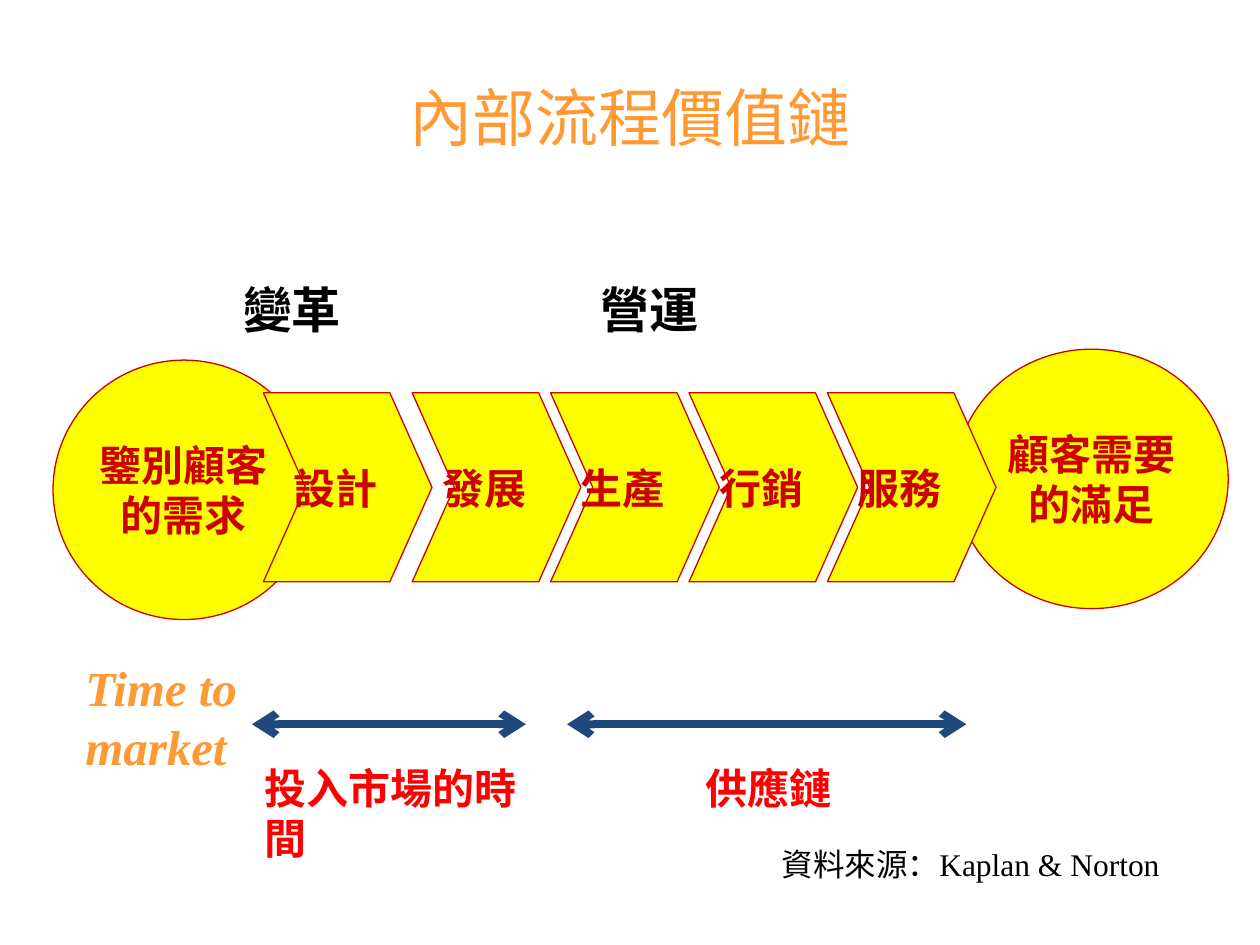
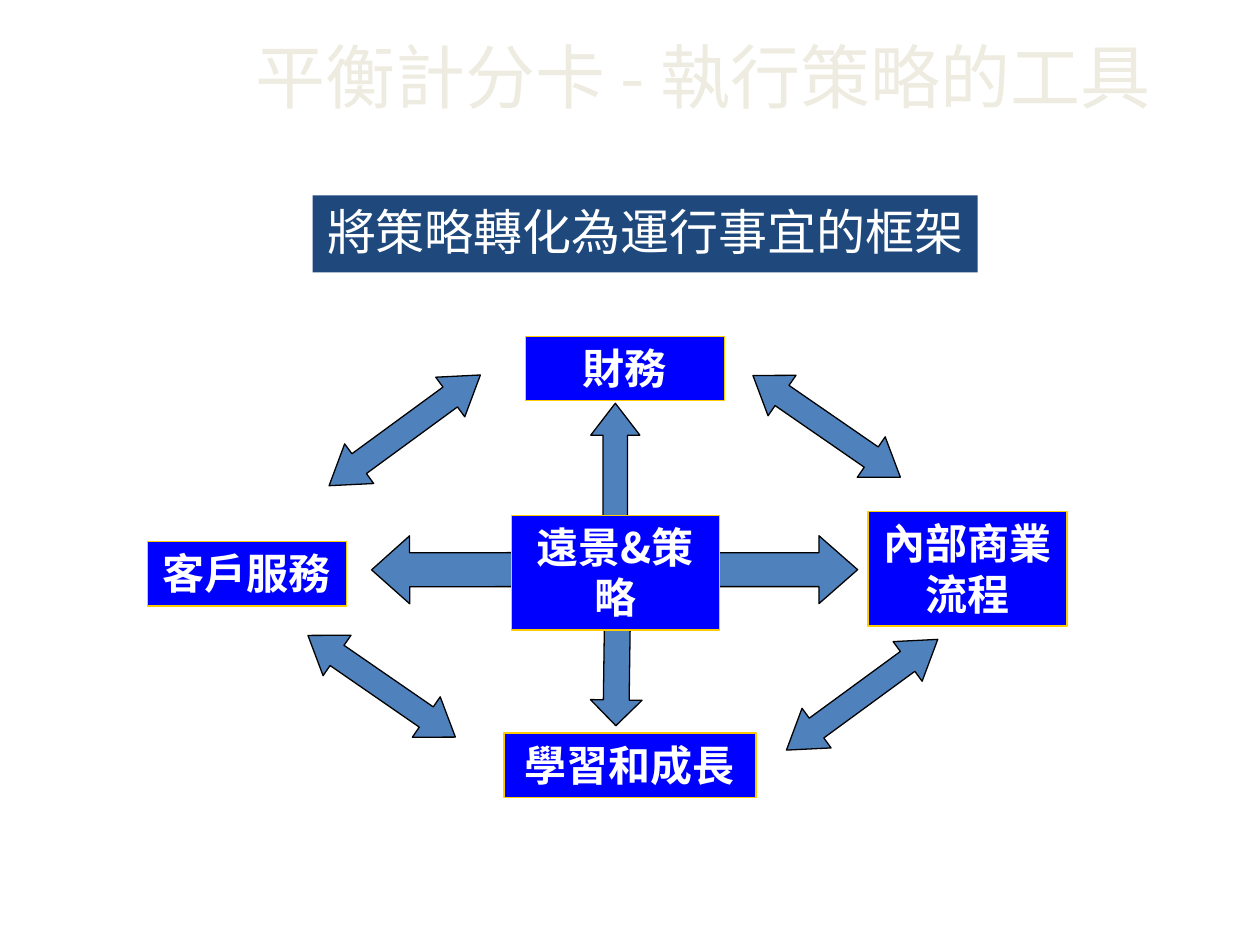
"""Builds two slides: the internal value chain and the balanced scorecard."""
from dataclasses import dataclass

from lxml.etree import SubElement
from pptx import Presentation
from pptx.dml.color import RGBColor
from pptx.enum.shapes import MSO_CONNECTOR, MSO_SHAPE as SHAPE
from pptx.enum.text import MSO_ANCHOR as ANCHOR, MSO_AUTO_SIZE, PP_ALIGN as ALIGN
from pptx.oxml.ns import qn
from pptx.util import Cm, Pt


@dataclass(frozen=True)
class Theme:
    sans: str = "Noto Sans CJK JP"
    serif: str = "Times New Roman"
    orange: str = "FF9933"
    cream: str = "EEECE1"
    yellow: str = "FFFF00"
    crimson: str = "CC0000"
    red: str = "FF0000"
    black: str = "000000"
    white: str = "FFFFFF"
    navy: str = "1F497D"
    blue: str = "0000FF"
    gold: str = "FFCC00"
    steel: str = "4F81BD"
    big: int = 40
    title: int = 36
    head: int = 28
    label: int = 24
    note: int = 18
    hairline: float = 0.75
    arrow: float = 4.5


T = Theme()

CHAIN_TITLE = "內部流程價值鏈"
CUSTOMERS = [("顧客需要\n的滿足", (19.25, 7.04, 5.51, 5.23)),
             ("鑒別顧客\n的需求", (1.07, 7.26, 5.28, 5.23))]
FIRST_STEP, OTHER_STEPS = "設計", ["發展", "生產", "行銷", "服務"]
FIRST_X, OTHER_X, STEP_PITCH = 5.31, 8.31, 2.79
STEP_TOP, STEP_W, STEP_H = 7.92, 3.4, 3.81
HEAD = dict(size=T.head, color=T.black, bold=True)
SPAN = dict(size=T.label, color=T.red, bold=True)
CHAIN_LABELS = [
    ("變革", (4.65, 5.51, 2.74, 1.45), ALIGN.LEFT, HEAD),
    ("營運", (11.86, 5.51, 2.74, 1.45), ALIGN.LEFT, HEAD),
    ("Time to market", (1.47, 13.13, 6.35, 2.62), ALIGN.LEFT,
     dict(size=T.head, color=T.orange, bold=True, italic=True)),
    ("投入市場的時間", (5.08, 15.24, 5.92, 2.31), ALIGN.LEFT, SPAN),
    ("供應鏈", (13.97, 15.24, 3.61, 1.27), ALIGN.LEFT, SPAN),
    ("資料來源：Kaplan & Norton", (14.1, 16.92, 9.53, 1.02), ALIGN.RIGHT,
     dict(size=T.note, color=T.black)),
]
SPAN_Y, SPANS = 14.6, [(5.08, 10.6), (11.43, 19.48)]

CARD_TITLE = "平衡計分卡 - 執行策略的工具"
CARD_BANNER = "將策略轉化為運行事宜的框架"
PERSPECTIVES = [("財務", (10.59, 6.78, 4.01, 1.3)),
                ("內部商業流程", (17.5, 10.31, 4.01, 2.31)),
                ("學習和成長", (10.16, 14.78, 5.08, 1.3)),
                ("客戶服務", (2.97, 10.92, 4.01, 1.3))]
VISION = ("遠景&策略", (10.31, 10.39, 4.19, 2.31))
CARD_ARROWS = [
    (SHAPE.LEFT_RIGHT_ARROW, (14.86, 8.1, 3.61, 0.99), 34.6, 0.72),
    (SHAPE.RIGHT_ARROW, (14.17, 10.8, 3.12, 1.37), 0, 0.57),
    (SHAPE.RIGHT_ARROW, (7.49, 10.8, 3.07, 1.37), 179.9, 0.56),
    (SHAPE.UP_ARROW, (11.91, 12.52, 1.04, 2.11), 180.8, 0.5),
    (SHAPE.UP_ARROW, (11.91, 8.13, 0.99, 2.59), 0, 0.65),
    (SHAPE.LEFT_RIGHT_ARROW, (5.89, 13.34, 3.61, 0.99), 34.6, 0.72),
    (SHAPE.LEFT_RIGHT_ARROW, (6.27, 8.18, 3.78, 0.99), 323.8, 0.76),
    (SHAPE.LEFT_RIGHT_ARROW, (15.49, 13.51, 3.78, 0.99), 323.8, 0.76),
]


def write(sp, text, align, anchor=ANCHOR.TOP, wrap=True, font=T.sans, color=T.black, **fmt):
    tf = sp.text_frame
    tf.auto_size = MSO_AUTO_SIZE.NONE
    tf.word_wrap = wrap
    tf.vertical_anchor = anchor
    fmt = {**fmt, "name": font, "size": Pt(fmt["size"])}
    for i, line in enumerate(text.split("\n")):
        p = tf.add_paragraph() if i else tf.paragraphs[0]
        p.alignment = align
        r = p.add_run()
        r.text = line
        for key, value in fmt.items():
            setattr(r.font, key, value)
        r.font.color.rgb = RGBColor.from_string(color)
        SubElement(r.font._element, qn("a:ea"), typeface=T.sans)


def place(sp, box):
    for key, value in zip(("left", "top", "width", "height"), box):
        setattr(sp, key, Cm(value))


def paint(sp, fill):
    sp.fill.solid()
    sp.fill.fore_color.rgb = RGBColor.from_string(fill)


def add_shape(s, kind, box, fill, line, adj=()):
    sp = s.shapes.add_shape(kind, *map(Cm, box))
    sp.shadow.inherit = False
    paint(sp, fill)
    sp.line.color.rgb = RGBColor.from_string(line)
    sp.line.width = Pt(T.hairline)
    for i, value in enumerate(adj):
        sp.adjustments[i] = value
    return sp


def add_span(s, x1, x2, y):
    c = s.shapes.add_connector(MSO_CONNECTOR.STRAIGHT, Cm(x1), Cm(y), Cm(x2), Cm(y))
    c.line.color.rgb = RGBColor.from_string(T.navy)
    c.line.width = Pt(T.arrow)
    for end in ("a:headEnd", "a:tailEnd"):
        SubElement(c.line._get_or_add_ln(), qn(end), type="arrow")
    SubElement(c._element.spPr, qn("a:effectLst"))


def add_slide(prs, layout, title, box, size, color):
    s = prs.slides.add_slide(prs.slide_layouts[layout])
    place(s.shapes.title, box)
    write(s.shapes.title, title, ALIGN.CENTER, ANCHOR.MIDDLE, size=size, color=color)
    return s


def value_chain(prs):
    s = add_slide(prs, 5, CHAIN_TITLE, (1.27, 0.76, 22.86, 3.18), T.title, T.orange)
    style = dict(anchor=ANCHOR.MIDDLE, wrap=False, font=T.serif,
                 size=T.label, color=T.crimson, bold=True)
    for text, box in CUSTOMERS:
        sp = add_shape(s, SHAPE.OVAL, box, T.yellow, T.crimson)
        write(sp, text, ALIGN.CENTER, **style)
    steps = [(FIRST_STEP, FIRST_X)]
    steps += [(text, OTHER_X + i * STEP_PITCH) for i, text in enumerate(OTHER_STEPS)]
    for text, x in steps:
        sp = add_shape(s, SHAPE.CHEVRON, (x, STEP_TOP, STEP_W, STEP_H),
                       T.yellow, T.crimson, [0.25])
        write(sp, text, ALIGN.RIGHT, **style)
    for x1, x2 in SPANS:
        add_span(s, x1, x2, SPAN_Y)
    for text, box, align, fmt in CHAIN_LABELS:
        write(s.shapes.add_textbox(*map(Cm, box)), text, align, font=T.serif, **fmt)


def add_node(s, text, box):
    sp = add_shape(s, SHAPE.RECTANGLE, box, T.blue, T.gold)
    write(sp, text, ALIGN.CENTER, size=T.label, color=T.white, bold=True)


def scorecard(prs):
    s = add_slide(prs, 1, CARD_TITLE, (4.01, 0.25, 20.32, 2.54), T.big, T.cream)
    banner = s.placeholders[1]
    place(banner, (6.3, 3.94, 13.41, 1.55))
    paint(banner, T.navy)
    write(banner, CARD_BANNER, ALIGN.CENTER, size=T.head, color=T.white)
    pPr = banner.text_frame.paragraphs[0]._p.get_or_add_pPr()
    pPr.set("marL", "0")
    pPr.set("indent", "0")
    SubElement(pPr, qn("a:buNone"))
    for text, box in PERSPECTIVES:
        add_node(s, text, box)
    for kind, box, angle, head in CARD_ARROWS:
        add_shape(s, kind, box, T.steel, T.black, [0.5, head]).rotation = angle
    add_node(s, *VISION)


def main():
    prs = Presentation()
    prs.slide_width, prs.slide_height = Cm(25.4), Cm(19.05)
    value_chain(prs)
    scorecard(prs)
    prs.save("out.pptx")


if __name__ == "__main__":
    main()
